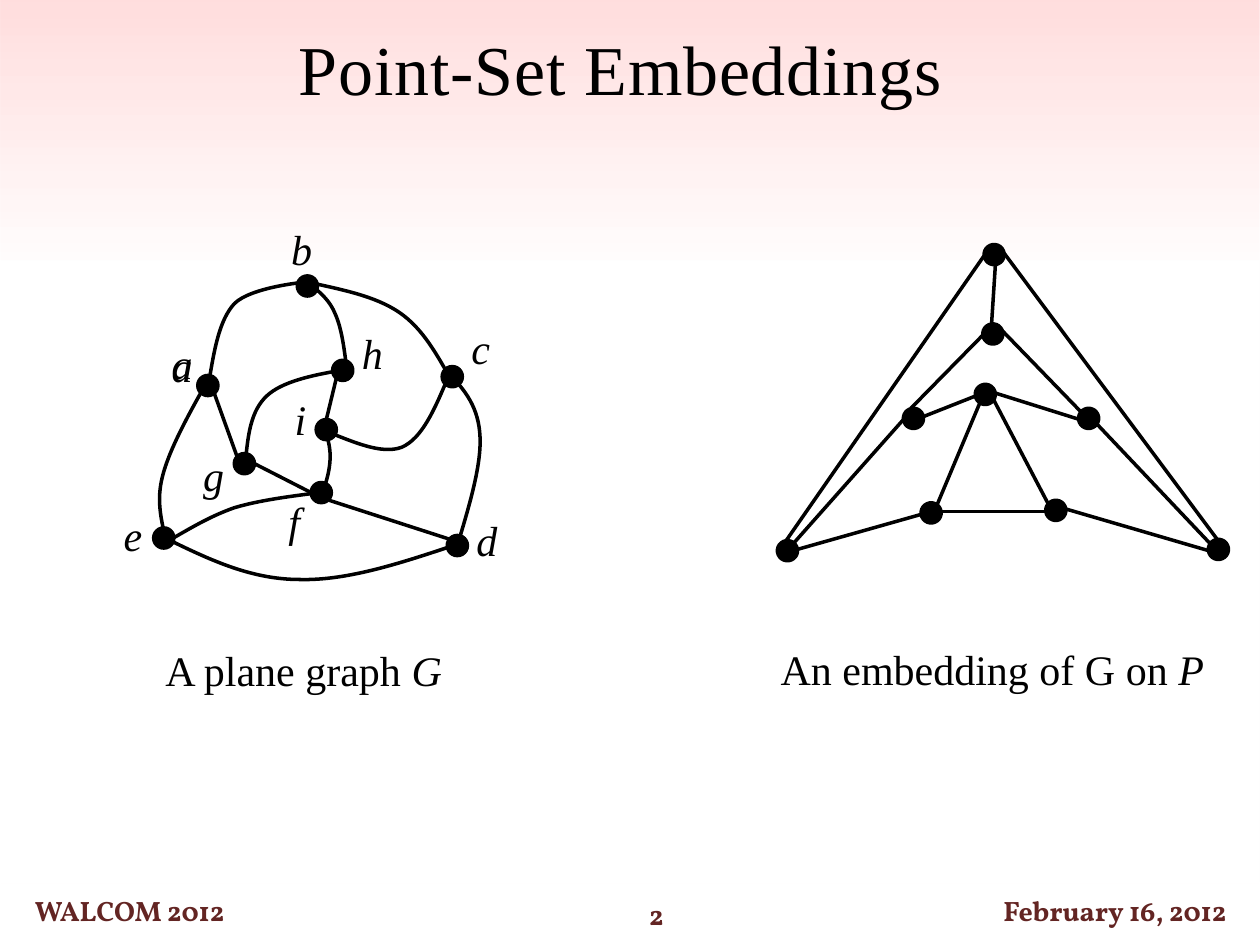
from typing import NamedTuple

from lxml import etree
from pptx import Presentation
from pptx.dml.color import RGBColor
from pptx.enum.shapes import MSO_CONNECTOR, MSO_SHAPE
from pptx.enum.text import MSO_ANCHOR, PP_ALIGN
from pptx.oxml import parse_xml
from pptx.oxml.ns import nsdecls, qn
from pptx.util import Inches, Pt

LINE = MSO_CONNECTOR.STRAIGHT
RECT, ROUND, OVAL = MSO_SHAPE.RECTANGLE, MSO_SHAPE.ROUNDED_RECTANGLE, MSO_SHAPE.OVAL
CENTER, TOP, MIDDLE = PP_ALIGN.CENTER, MSO_ANCHOR.TOP, MSO_ANCHOR.MIDDLE
BLACK, MAROON, RED = "000000", "632523", "FF0000"
DOT = 0.16
SERIF = {"name": "Times New Roman", "size": Pt(24)}
FOOTER = {"name": "Vollkorn", "size": Pt(16), "bold": True}


class Box(NamedTuple):
    x: float
    y: float
    w: float
    h: float


class Edge(NamedTuple):
    x1: float
    y1: float
    x2: float
    y2: float


class Label(NamedTuple):
    text: str
    x: float
    y: float


class Caption(NamedTuple):
    box: Box
    text: str
    symbol: str


class Footer(NamedTuple):
    text: str
    box: Box


GRAPH_DOTS = [(1.57, 2.98), (2.36, 2.19), (2.51, 3.33), (2.64, 2.86), (3.55, 4.25),
              (1.22, 4.19), (3.51, 2.91), (2.47, 3.83), (1.86, 3.6)]
EMBEDDING_DOTS = [(7.31, 3.99), (6.17, 4.29), (7.8, 2.57), (7.17, 3.24), (9.59, 4.28),
                  (8.3, 3.97), (7.81, 1.94), (8.56, 3.24), (7.74, 3.05)]
GRAPH_EDGES = [
    Edge(2.02, 3.68, 2.47, 3.91), Edge(2.61, 3.97, 3.57, 4.28),
    Edge(1.88, 3.62, 1.7, 3.12), Edge(2.59, 3.33, 2.67, 3),
]
EMBEDDING_EDGES = [
    Edge(7.32, 4.08, 6.33, 4.36), Edge(7.81, 2.03, 6.24, 4.29),
    Edge(8.3, 4.06, 7.47, 4.06), Edge(7.32, 3.31, 7.75, 3.14),
    Edge(7.23, 3.24, 7.8, 2.66), Edge(9.66, 4.28, 7.97, 2.01),
    Edge(7.96, 2.63, 8.58, 3.27), Edge(7.9, 3.12, 8.57, 3.33),
    Edge(8.71, 3.37, 9.6, 4.31), Edge(6.3, 4.31, 7.17, 3.33),
    Edge(8.46, 4.04, 9.59, 4.37), Edge(7.87, 2.57, 7.9, 2.1),
    Edge(7.44, 4, 7.78, 3.19), Edge(8.32, 4, 7.89, 3.18),
]
CURVES = [
    [(1.31, 4.26), (1.28, 4.12), (1.24, 3.97), (1.29, 3.78), (1.34, 3.58), (1.48, 3.32), (1.62, 3.07)],
    [(1.66, 3.02), (1.7, 2.78), (1.74, 2.54), (1.86, 2.41), (1.99, 2.28), (2.41, 2.24), (2.41, 2.24)],
    [(1.34, 4.29), (1.5, 4.2), (1.66, 4.1), (1.86, 4.03), (2.06, 3.97), (2.3, 3.94), (2.53, 3.91)],
    [(1.33, 4.28), (1.66, 4.44), (1.99, 4.6), (2.38, 4.6), (2.77, 4.61), (3.21, 4.46), (3.66, 4.31)],
    [(2.45, 2.24), (2.72, 2.3), (2.98, 2.35), (3.17, 2.48), (3.36, 2.61), (3.47, 2.82), (3.59, 3.03)],
    [(3.62, 4.36), (3.72, 4.03), (3.82, 3.7), (3.81, 3.47), (3.8, 3.23), (3.69, 3.1), (3.57, 2.97)],
    [(2.58, 3.42), (2.81, 3.51), (3.03, 3.61), (3.19, 3.55), (3.35, 3.48), (3.45, 3.25), (3.55, 3.01)],
    [(2.75, 2.91), (2.73, 2.75), (2.71, 2.6), (2.66, 2.49), (2.62, 2.39), (2.55, 2.33), (2.48, 2.27)],
    [(1.95, 3.64), (1.97, 3.45), (1.99, 3.26), (2.12, 3.14), (2.24, 3.03), (2.47, 2.98), (2.7, 2.94)],
    [(2.57, 3.88), (2.6, 3.79), (2.62, 3.71), (2.62, 3.62), (2.62, 3.54), (2.6, 3.47), (2.57, 3.39)],
]
LABELS = [
    Label("a", 1.23, 2.71), Label("a", 1.23, 2.69), Label("b", 2.18, 1.78),
    Label("c", 3.6, 2.57), Label("d", 3.65, 4.09), Label("e", 0.84, 4.05),
    Label("f", 2.12, 3.94), Label("g", 1.48, 3.58), Label("h", 2.74, 2.61),
    Label("i", 2.17, 3.13),
]
CAPTIONS = [
    Caption(Box(1.2, 5.07, 2.42, 0.5), "A plane graph ", "G"),
    Caption(Box(6.08, 5.06, 3.59, 0.5), "An embedding of G on ", "P"),
]
FOOTERS = [
    Footer("2", Box(4.18, 7.08, 2.06, 0.35)),
    Footer("WALCOM 2012", Box(0, 7.05, 2.06, 0.35)),
    Footer("February 16, 2012", Box(7.7, 7.05, 2.3, 0.35)),
]
FADE = [(0, RED, 0), (45, RED, 0), (70, "FF0300", 0), (100, RED, 13)]


def rgb(color: str) -> RGBColor:
    return RGBColor.from_string(color)


def set_line(sp) -> None:
    sp.line.color.rgb = rgb(BLACK)
    sp.line.width = Pt(2)


def add_shape(s, kind, box: Box):
    sp = s.shapes.add_shape(kind, *map(Inches, box))
    sp.shadow.inherit = False
    sp.fill.background()
    sp.line.fill.background()
    return sp


def add_fade(s, box: Box) -> None:
    sp = add_shape(s, RECT, box)
    stops = "".join(
        f'<a:gs pos="{pos * 1000}"><a:srgbClr val="{color}">'
        f'<a:alpha val="{alpha * 1000}"/></a:srgbClr></a:gs>'
        for pos, color, alpha in FADE)
    grad = parse_xml(f'<a:gradFill {nsdecls("a")} rotWithShape="1"><a:gsLst>{stops}</a:gsLst>'
                     '<a:lin ang="16200000" scaled="0"/></a:gradFill>')
    sp_pr = sp._element.spPr
    sp_pr.replace(sp_pr.find(qn("a:noFill")), grad)


def add_dot(s, x: float, y: float, rotation: float = 0) -> None:
    sp = add_shape(s, OVAL, Box(x, y, DOT, DOT))
    sp.rotation = rotation
    sp.fill.solid()
    sp.fill.fore_color.rgb = rgb(BLACK)
    set_line(sp)


def add_edge(s, edge: Edge) -> None:
    cxn = s.shapes.add_connector(LINE, *map(Inches, edge))
    set_line(cxn)
    etree.SubElement(cxn._element.spPr, qn("a:effectLst"))


def add_curve(s, points: list[tuple[float, float]]) -> None:
    start, *rest = [(Inches(x), Inches(y)) for x, y in points]
    builder = s.shapes.build_freeform(*start)
    builder.add_line_segments(rest, close=False)
    sp = builder.convert_to_shape()
    sp.shadow.inherit = False
    sp.fill.background()
    set_line(sp)
    segments = sp._element.xpath(".//a:lnTo")
    outline = segments[0].getparent()
    for i in range(0, len(segments), 3):
        bezier = etree.SubElement(outline, qn("a:cubicBezTo"))
        for segment in segments[i:i + 3]:
            bezier.append(segment[0])
            outline.remove(segment)


def write(sp, runs: list[tuple[str, dict]], color: str = BLACK, anchor=MIDDLE, wrap: bool = True):
    tf = sp.text_frame
    for name, value in {"word_wrap": wrap, "vertical_anchor": anchor}.items():
        setattr(tf, name, value)
    p = tf.paragraphs[0]
    p.alignment = CENTER
    for text, fmt in runs:
        r = p.add_run()
        r.text = text
        r.font.color.rgb = rgb(color)
        for name, value in fmt.items():
            setattr(r.font, name, value)
    return p


def add_text(s, box: Box, runs: list[tuple[str, dict]], **options):
    return write(s.shapes.add_textbox(*map(Inches, box)), runs, **options)


def main() -> None:
    prs = Presentation()
    prs.slide_width, prs.slide_height = Inches(10), Inches(7.5)
    s = prs.slides.add_slide(prs.slide_layouts[6])
    italic = SERIF | {"italic": True}

    add_fade(s, Box(0, 0, 10, 7.01))
    title = add_text(s, Box(0, 0.15, 10, 0.77),
                     [("Point-Set Embeddings ", SERIF | {"size": Pt(40)})], anchor=TOP)
    title.runs[0].font._element.set("spc", "50")

    for x, y in GRAPH_DOTS:
        add_dot(s, x, y)
    for points in CURVES:
        add_curve(s, points)
    for x, y in EMBEDDING_DOTS:
        add_dot(s, x, y, 262.2)
    for edge in GRAPH_EDGES + EMBEDDING_EDGES:
        add_edge(s, edge)
    for label in LABELS:
        add_text(s, Box(label.x, label.y, 0.43, 0.38), [(label.text, italic)])
    for caption in CAPTIONS:
        add_text(s, caption.box, [(caption.text, SERIF), (caption.symbol, italic)],
                 anchor=TOP, wrap=False)
    for footer in FOOTERS:
        write(add_shape(s, ROUND, footer.box), [(footer.text, FOOTER)], color=MAROON)

    prs.save("out.pptx")


if __name__ == "__main__":
    main()
